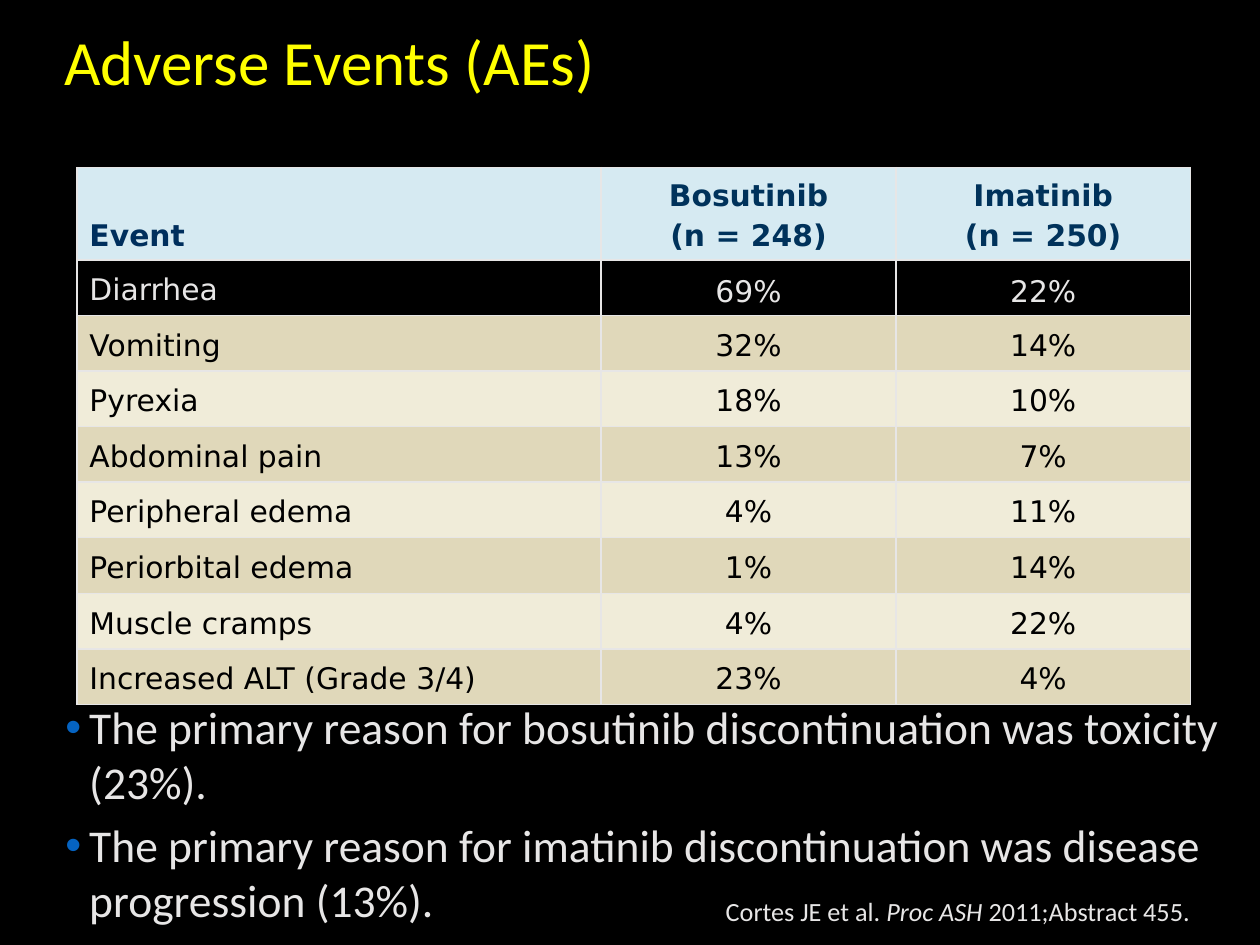
from dataclasses import dataclass
from typing import Any

from lxml.etree import SubElement
from pptx import Presentation
from pptx.dml.color import RGBColor
from pptx.enum.text import MSO_ANCHOR as Anchor, MSO_AUTO_SIZE as AutoSize, PP_ALIGN as Align
from pptx.oxml.ns import qn
from pptx.util import Cm, Pt

COLORS = {
    "background": "000000",
    "title": "FFFF00",
    "light": "E7E6E6",
    "dark": "000000",
    "event_head": "002F5D",
    "drug_head": "00325B",
    "head_fill": "D6EAF2",
    "band": "E0D8BA",
    "pale_band": "F0ECD9",
    "bullet": "0563C1",
}
BODY = "Calibri"
GRID = "DejaVu Sans"


@dataclass(frozen=True)
class AdverseEvent:
    name: str
    bosutinib: str
    imatinib: str


@dataclass(frozen=True)
class CellStyle:
    color: str
    fill: str | None
    anchor: Any
    bold: bool = False
    spacing: float = 1.15
    before: float = 3.4


EVENTS = [
    AdverseEvent("Diarrhea", "69%", "22%"),
    AdverseEvent("Vomiting", "32%", "14%"),
    AdverseEvent("Pyrexia", "18%", "10%"),
    AdverseEvent("Abdominal pain", "13%", "7%"),
    AdverseEvent("Peripheral edema", "4%", "11%"),
    AdverseEvent("Periorbital edema", "1%", "14%"),
    AdverseEvent("Muscle cramps", "4%", "22%"),
    AdverseEvent("Increased ALT (Grade 3/4)", "23%", "4%"),
]
HEADINGS = ["Event", "Bosutinib\n(n = 248)", "Imatinib\n(n = 250)"]
REASONS = [
    "The primary reason for bosutinib discontinuation was toxicity (23%).",
    "The primary reason for imatinib discontinuation was disease progression (13%).",
]
CITATION = [("Cortes JE et al. ", False), ("Proc ASH", True), (" 2011;Abstract 455.", False)]


def apply(target: Any, values: dict[str, Any]) -> None:
    for name, value in values.items():
        setattr(target, name, value)


def rgb(key: str) -> RGBColor:
    return RGBColor.from_string(COLORS[key])


def add_run(paragraph: Any, text: str, color: str, **font: Any) -> None:
    run = paragraph.add_run()
    run.text = text
    apply(run.font, font)
    run.font.color.rgb = rgb(color)


def add_borders(cell: Any) -> None:
    properties = cell._tc.get_or_add_tcPr()
    for position, side in enumerate(("lnL", "lnR", "lnT", "lnB")):
        line = properties.makeelement(qn(f"a:{side}"), {"w": str(Pt(1))})
        solid = SubElement(line, qn("a:solidFill"))
        SubElement(solid, qn("a:srgbClr"), val=COLORS["light"])
        properties.insert(position, line)


def fill_cell(cell: Any, text: str, style: CellStyle, align: Any) -> None:
    cell.vertical_anchor = style.anchor
    if style.fill:
        cell.fill.solid()
        cell.fill.fore_color.rgb = rgb(style.fill)
    else:
        cell.fill.background()
    add_borders(cell)
    for index, line in enumerate(text.split("\n")):
        frame = cell.text_frame
        paragraph = frame.add_paragraph() if index else frame.paragraphs[0]
        apply(paragraph, {"alignment": align, "line_spacing": style.spacing,
                          "space_before": Pt(style.before)})
        add_run(paragraph, line, style.color, name=GRID, size=Pt(17), bold=style.bold)


def body_style(row: int, column: int) -> CellStyle:
    if row == 0:
        return CellStyle("light", None, Anchor.BOTTOM if column else Anchor.MIDDLE)
    return CellStyle("dark", "band" if row % 2 else "pale_band", Anchor.MIDDLE)


def add_title(slide: Any) -> None:
    title = slide.shapes.title
    apply(title, {"left": Cm(1.04), "top": Cm(0), "width": Cm(23.14), "height": Cm(4.01)})
    apply(title.text_frame, {"vertical_anchor": Anchor.MIDDLE, "word_wrap": True,
                             "margin_bottom": Cm(1.52), "auto_size": AutoSize.NONE})
    heading = title.text_frame.paragraphs[0]
    apply(heading, {"alignment": Align.LEFT, "line_spacing": 0.9})
    add_run(heading, "Adverse Events (AEs)", "title", name=BODY, size=Pt(36))


def add_event_table(slide: Any) -> None:
    table = slide.shapes.add_table(len(EVENTS) + 1, len(HEADINGS), Cm(1.55), Cm(3.38),
                                   Cm(22.45), Cm(10.82)).table
    apply(table, {"first_row": False, "horz_banding": False})
    for column, width in zip(table.columns, (10.57, 5.94, 5.94)):
        column.width = Cm(width)
    for index, row in enumerate(table.rows):
        row.height = Cm(1.12 if index else 1.86)

    event_head = CellStyle("event_head", "head_fill", Anchor.BOTTOM, True, 1.3, 0)
    drug_head = CellStyle("drug_head", "head_fill", Anchor.BOTTOM, True, 1.0)
    for column, heading in enumerate(HEADINGS):
        align = Align.CENTER if column else Align.LEFT
        fill_cell(table.cell(0, column), heading, drug_head if column else event_head, align)
        for row, event in enumerate(EVENTS):
            text = (event.name, event.bosutinib, event.imatinib)[column]
            fill_cell(table.cell(row + 1, column), text, body_style(row, column), align)


def add_reasons(slide: Any) -> None:
    frame = slide.shapes.add_textbox(Cm(1.07), Cm(13.97), Cm(23.9), Cm(2.11)).text_frame
    frame.word_wrap = True
    for index, reason in enumerate(REASONS):
        paragraph = frame.add_paragraph() if index else frame.paragraphs[0]
        paragraph.space_before = Pt(5.2)
        properties = paragraph._p.get_or_add_pPr()
        properties.set("marL", str(Cm(0.48)))
        properties.set("indent", str(-Cm(0.48)))
        bullet_color = SubElement(properties, qn("a:buClr"))
        SubElement(bullet_color, qn("a:srgbClr"), val=COLORS["bullet"])
        SubElement(properties, qn("a:buFont"), typeface="Arial")
        SubElement(properties, qn("a:buChar"), char="•")
        add_run(paragraph, reason, "light", name=BODY, size=Pt(26))


def add_citation(slide: Any) -> None:
    frame = slide.shapes.add_textbox(Cm(14.38), Cm(17.93), Cm(9.96), Cm(0.89)).text_frame
    apply(frame, {"word_wrap": False, "auto_size": AutoSize.SHAPE_TO_FIT_TEXT})
    for text, italic in CITATION:
        add_run(frame.paragraphs[0], text, "light", name=BODY, size=Pt(15), italic=italic)


def main() -> None:
    deck = Presentation()
    apply(deck, {"slide_width": Cm(25.4), "slide_height": Cm(19.05)})
    slide = deck.slides.add_slide(deck.slide_layouts[5])
    slide.background.fill.solid()
    slide.background.fill.fore_color.rgb = rgb("background")
    add_title(slide)
    add_event_table(slide)
    add_reasons(slide)
    add_citation(slide)
    deck.save("out.pptx")


if __name__ == "__main__":
    main()
